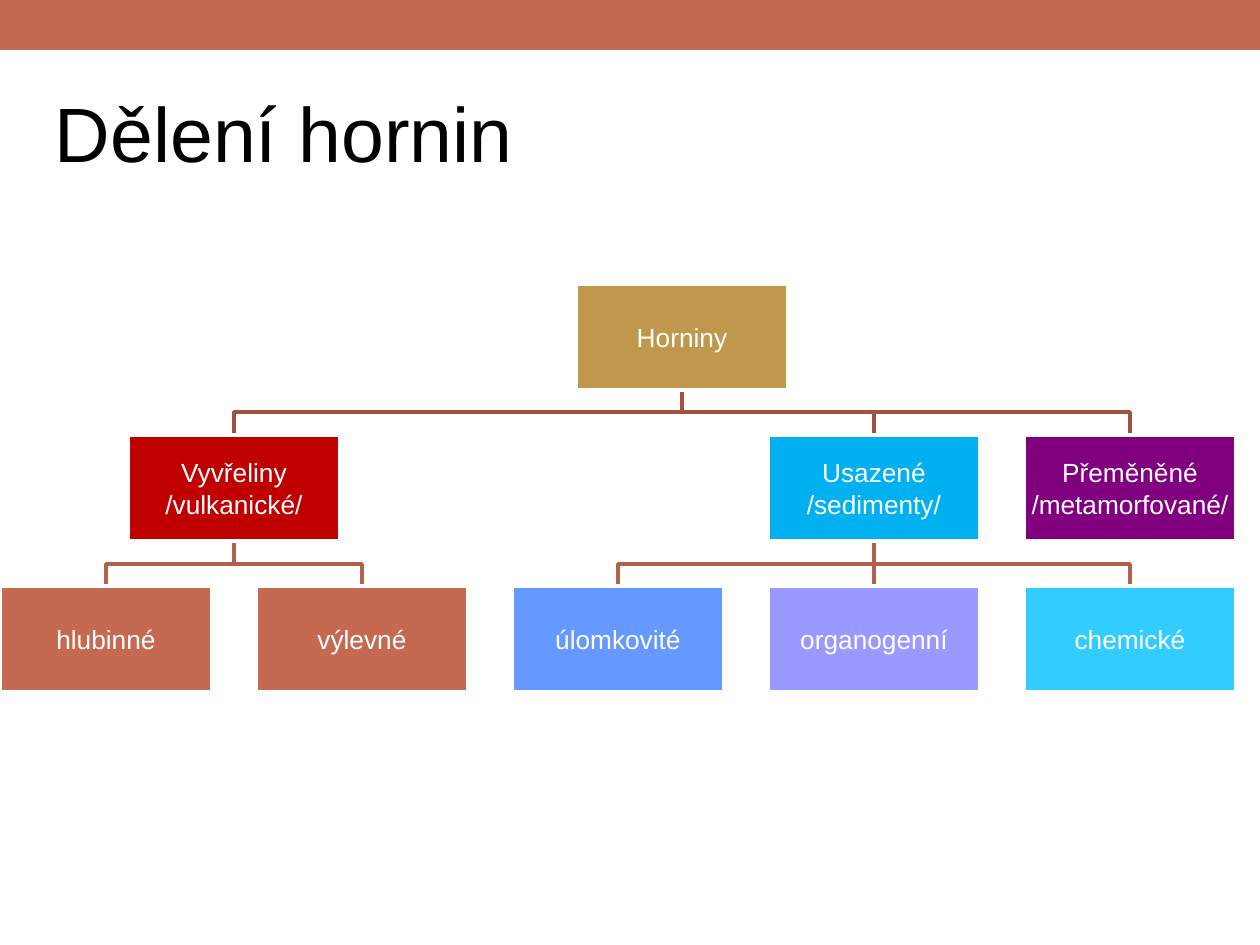
from pptx import Presentation
from pptx.dml.color import RGBColor
from pptx.enum.shapes import MSO_CONNECTOR, MSO_SHAPE
from pptx.enum.text import MSO_ANCHOR, PP_ALIGN
from pptx.oxml.ns import qn
from pptx.util import Pt
from lxml.etree import SubElement

PX = 914400 / 126
BOX_WIDTH, BOX_HEIGHT = 212, 106
COLUMN_STEP, ROW_STEP, TREE_TOP = 256, 151, 284


def px(length):
    return round(length * PX)


def color(hex_string):
    return RGBColor.from_string(hex_string)


presentation = Presentation()
presentation.slide_width, presentation.slide_height = px(1260), px(945)
slide = presentation.slides.add_slide(presentation.slide_layouts[5])

# Top band
band = slide.shapes.add_shape(MSO_SHAPE.RECTANGLE, 0, 0, px(1260), px(50))
band.shadow.inherit = False
band.fill.solid()
band.fill.fore_color.rgb = color("C66951")
band.line.fill.background()

# Title
title = slide.shapes.title
title.left, title.top, title.width, title.height = px(32), px(53), px(504), px(158)
title.text_frame.vertical_anchor = MSO_ANCHOR.MIDDLE
paragraph = title.text_frame.paragraphs[0]
paragraph.alignment = PP_ALIGN.CENTER
run = paragraph.add_run()
run.text = "Dělení hornin"
run.font.name, run.font.size = "Arial", Pt(44)
run.font.color.rgb = color("000000")

# Rock tree: key -> column, row, parent, fill, lines of text
rocks = {
    "rocks": (2.25, 0, None, "BF974D", ["Horniny"]),
    "igneous": (0.5, 1, "rocks", "C00000", ["Vyvřeliny", "/vulkanické/"]),
    "plutonic": (0, 2, "igneous", "C66951", ["hlubinné"]),
    "volcanic": (1, 2, "igneous", "C66951", ["výlevné"]),
    "sedimentary": (3, 1, "rocks", "00B0F0", ["Usazené", "/sedimenty/"]),
    "clastic": (2, 2, "sedimentary", "6699FF", ["úlomkovité"]),
    "organic": (3, 2, "sedimentary", "9999FF", ["organogenní"]),
    "chemical": (4, 2, "sedimentary", "33CCFF", ["chemické"]),
    "metamorphic": (4, 1, "rocks", "800080", ["Přeměněné", "/metamorfované/"]),
}
branch_colors = {1: "9F5441", 2: "B45F4A"}

# Branches from the bottom of each parent to the top of its child
for column, row, parent, fill, lines in rocks.values():
    if parent is None:
        continue
    start_x = rocks[parent][0] * COLUMN_STEP + BOX_WIDTH / 2
    end_x = column * COLUMN_STEP + BOX_WIDTH / 2
    end_y = TREE_TOP + row * ROW_STEP
    start_y = end_y - ROW_STEP + BOX_HEIGHT
    middle_y = (start_y + end_y) / 2
    if start_x == end_x:
        branch = slide.shapes.add_connector(
            MSO_CONNECTOR.STRAIGHT, px(start_x), px(start_y), px(end_x), px(end_y))
        SubElement(branch._element.spPr, qn("a:effectLst"))
    else:
        builder = slide.shapes.build_freeform(start_x, start_y, scale=PX)
        builder.add_line_segments(
            [(start_x, middle_y), (end_x, middle_y), (end_x, end_y)], close=False)
        branch = builder.convert_to_shape()
        branch.shadow.inherit = False
        branch.fill.background()
    branch.line.color.rgb = color(branch_colors[row])
    branch.line.width = Pt(2.08)

# Boxes
for column, row, parent, fill, lines in rocks.values():
    box = slide.shapes.add_shape(
        MSO_SHAPE.RECTANGLE, px(column * COLUMN_STEP), px(TREE_TOP + row * ROW_STEP),
        px(BOX_WIDTH), px(BOX_HEIGHT))
    box.shadow.inherit = False
    box.fill.solid()
    box.fill.fore_color.rgb = color(fill)
    box.line.color.rgb = color("FFFFFF")
    box.line.width = Pt(2.08)
    frame = box.text_frame
    frame.word_wrap = True
    frame.vertical_anchor = MSO_ANCHOR.MIDDLE
    frame.margin_left = frame.margin_right = px(1)
    frame.margin_top = frame.margin_bottom = px(1)
    for index, line in enumerate(lines):
        paragraph = frame.add_paragraph() if index else frame.paragraphs[0]
        paragraph.alignment = PP_ALIGN.CENTER
        run = paragraph.add_run()
        run.text = line
        run.font.name, run.font.size = "Arial", Pt(15)
        run.font.color.rgb = color("FFFFFF")

presentation.save("out.pptx")
